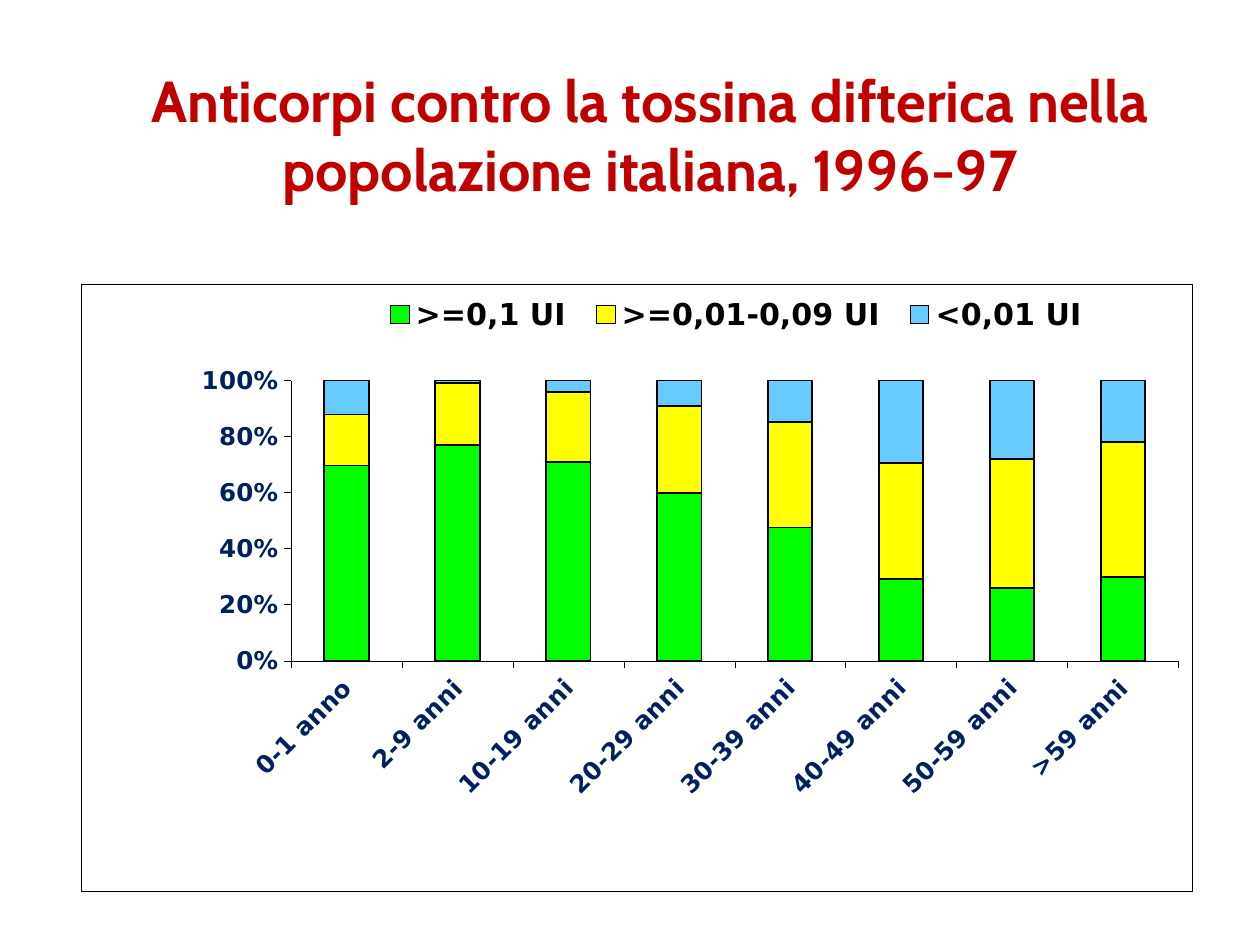
from lxml.etree import SubElement
from pptx import Presentation
from pptx.chart.data import CategoryChartData
from pptx.dml.color import RGBColor
from pptx.enum.chart import XL_CHART_TYPE, XL_LEGEND_POSITION, XL_TICK_MARK
from pptx.enum.text import MSO_ANCHOR, MSO_AUTO_SIZE, PP_ALIGN
from pptx.oxml import parse_xml
from pptx.oxml.ns import nsdecls, qn
from pptx.util import Emu, Pt

COLORS = {"title": "C00000", "axis": "002060", "black": "000000", "white": "FFFFFF",
          "chart_text": "800000", "high": "00FF00", "middle": "FFFF00", "low": "66CCFF"}
TITLE = "Anticorpi contro la tossina difterica nella popolazione italiana, 1996-97"
AGES = ["0-1 anno", "2-9 anni", "10-19 anni", "20-29 anni",
        "30-39 anni", "40-49 anni", "50-59 anni", ">59 anni"]
LEVELS = [
    (">=0,1 UI", "high", [69, 77, 71, 60, 48, 29, 26, 30]),
    (">=0,01-0,09 UI", "middle", [18, 22, 25, 31, 38, 41, 46, 48]),
    ("<0,01 UI", "low", [12, 1, 4, 9, 15, 29, 28, 22]),
]


def px(count):
    return Emu(round(count * 914400 / 126))


def color(name):
    return RGBColor.from_string(COLORS[name])


class SlideBuilder:
    title_font = "Cabin"
    chart_font = "DejaVu Sans"

    def __init__(self, deck):
        self.page = deck.slides.add_slide(deck.slide_layouts[5])

    def set_values(self, target, values):
        for name, value in values.items():
            setattr(target, name, value)

    def style_font(self, font, size, tint, face):
        self.set_values(font, {"size": Pt(size), "bold": True, "name": face})
        font.color.rgb = color(tint)

    def style_line(self, line, tint, width):
        line.color.rgb = color(tint)
        line.width = Pt(width)

    def title(self, text, left, top, width, height):
        box = self.page.shapes.title
        self.set_values(box, {"left": px(left), "top": px(top),
                              "width": px(width), "height": px(height)})
        frame = box.text_frame
        self.set_values(frame, {"word_wrap": True, "auto_size": MSO_AUTO_SIZE.NONE,
                                "vertical_anchor": MSO_ANCHOR.MIDDLE})
        para = frame.paragraphs[0]
        para.alignment = PP_ALIGN.CENTER
        span = para.add_run()
        span.text = text
        self.style_font(span.font, 33, "title", self.title_font)

    def place(self, element, position, inner=False):
        """Give a chart part a manual layout in fractions of the chart."""
        layout = element.find(qn("c:layout"))
        if layout is None:
            layout = parse_xml(f"<c:layout {nsdecls('c')}/>")
            legend_place = element.find(qn("c:legendPos"))
            if legend_place is None:
                element.insert(0, layout)
            else:
                legend_place.addnext(layout)
        for child in list(layout):
            layout.remove(child)
        manual = SubElement(layout, qn("c:manualLayout"))
        settings = [("layoutTarget", "inner")] if inner else []
        settings += [("xMode", "edge"), ("yMode", "edge")]
        settings += zip("xywh", position)
        for tag, value in settings:
            SubElement(manual, qn(f"c:{tag}")).set("val", str(value))

    def axis(self, axis):
        axis.major_tick_mark = XL_TICK_MARK.OUTSIDE
        axis.minor_tick_mark = XL_TICK_MARK.NONE
        self.style_font(axis.tick_labels.font, 14, "axis", self.chart_font)
        self.style_line(axis.format.line, "black", 0.25)

    def stacked_chart(self, categories, levels, left, top, width, height):
        data = CategoryChartData()
        data.categories = categories
        for name, _, values in levels:
            data.add_series(name, values)
        chart = self.page.shapes.add_chart(
            XL_CHART_TYPE.COLUMN_STACKED_100,
            px(left), px(top), px(width), px(height), data).chart
        chart.has_title = False
        self.style_font(chart.font, 18.7, "chart_text", self.chart_font)

        # Columns
        plot = chart.plots[0]
        self.set_values(plot, {"gap_width": 150, "overlap": 100, "vary_by_categories": False})
        for series, (_, tint, _) in zip(plot.series, levels):
            series.format.fill.solid()
            series.format.fill.fore_color.rgb = color(tint)
            self.style_line(series.format.line, "black", 1.04)

        # Axes, with slanted category labels
        self.axis(chart.category_axis)
        text = chart.category_axis.tick_labels.font._element.getparent().getparent().getparent()
        text.find(qn("a:bodyPr")).set("rot", "-2700000")
        value_axis = chart.value_axis
        self.axis(value_axis)
        self.set_values(value_axis, {"major_unit": 0.2, "has_major_gridlines": True})
        self.set_values(value_axis.tick_labels,
                        {"number_format": "0%", "number_format_is_linked": False})
        self.style_line(value_axis.major_gridlines.format.line, "white", 1.04)

        # Legend
        chart.has_legend = True
        legend = chart.legend
        self.set_values(legend, {"position": XL_LEGEND_POSITION.TOP, "include_in_layout": False})
        self.style_font(legend.font, 17.2, "black", self.chart_font)
        self.place(legend._element, (0.26, 0.02, 0.66, 0.06))

        # Plot position and chart border
        space = chart._chartSpace
        body = space.find(qn("c:chart"))
        self.place(body.find(qn("c:plotArea")), (0.189, 0.159, 0.799, 0.462), inner=True)
        body.addnext(parse_xml(
            f'<c:spPr {nsdecls("c", "a")}><a:noFill/><a:ln w="{Pt(0.25)}"><a:solidFill>'
            f'<a:srgbClr val="{COLORS["black"]}"/></a:solidFill></a:ln></c:spPr>'))


def main():
    deck = Presentation()
    deck.slide_width, deck.slide_height = px(1260), px(945)
    builder = SlideBuilder(deck)
    builder.title(TITLE, 74, 55, 1152, 158)
    builder.stacked_chart(AGES, LEVELS, 81, 284, 1111, 607)
    deck.save("out.pptx")


if __name__ == "__main__":
    main()
